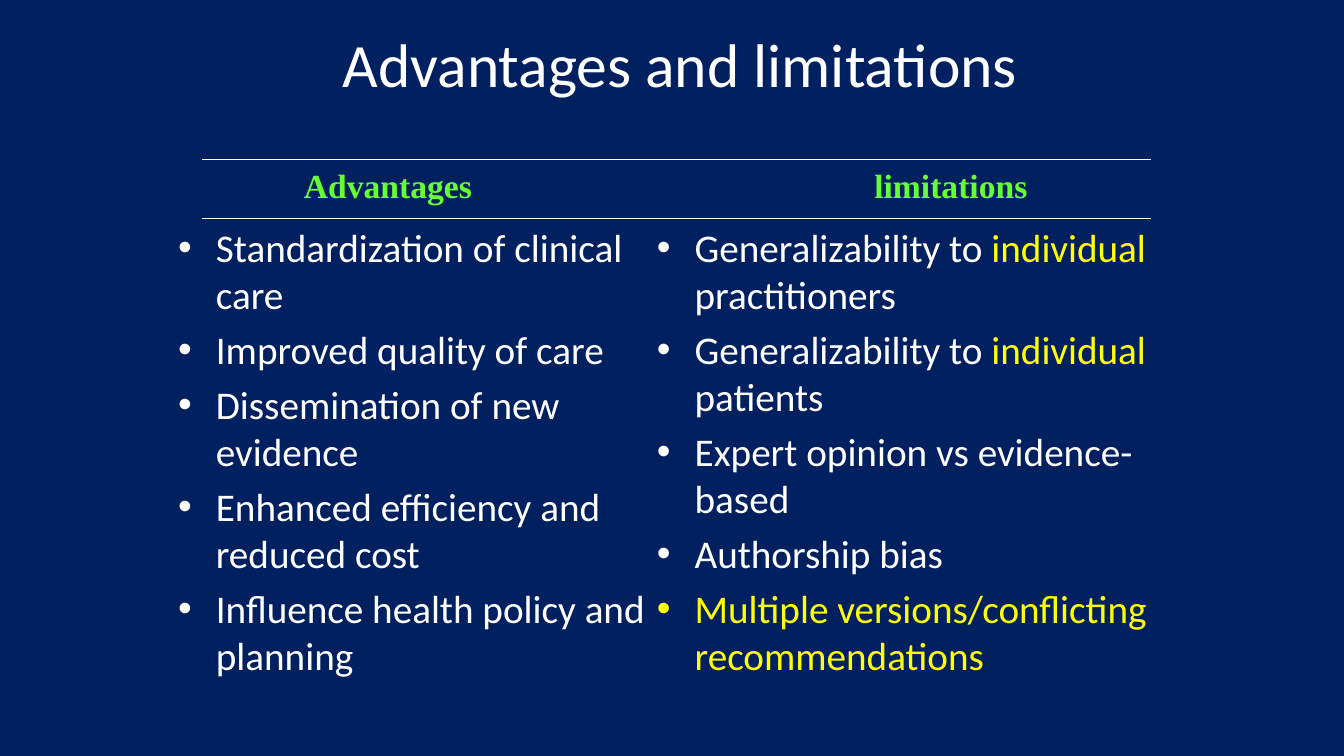
from dataclasses import dataclass

from lxml import etree
from pptx import Presentation
from pptx.dml.color import RGBColor
from pptx.enum.shapes import MSO_CONNECTOR
from pptx.enum.text import MSO_ANCHOR, MSO_AUTO_SIZE, PP_ALIGN
from pptx.oxml.ns import qn
from pptx.util import Pt

STRAIGHT = MSO_CONNECTOR.STRAIGHT
MIDDLE = MSO_ANCHOR.MIDDLE
CENTER = PP_ALIGN.CENTER
NO_FIT = MSO_AUTO_SIZE.NONE
TWO_CONTENT = 3


@dataclass(frozen=True)
class Theme:
    background: RGBColor = RGBColor(0x00, 0x20, 0x60)
    text: RGBColor = RGBColor(0xFF, 0xFF, 0xFF)
    accent: RGBColor = RGBColor(0xFF, 0xFF, 0x00)
    heading: RGBColor = RGBColor(0x66, 0xFF, 0x33)
    body_font: str = "Calibri"
    heading_font: str = "Times New Roman"
    title_size: Pt = Pt(44)
    body_size: Pt = Pt(28)
    heading_size: Pt = Pt(24)
    rule_width: Pt = Pt(0.75)


THEME = Theme()

# Each item is a list of (wording, highlighted) spans.
ADVANTAGES = [
    [("Standardization of clinical care", False)],
    [("Improved quality of care", False)],
    [("Dissemination of new evidence", False)],
    [("Enhanced efficiency and reduced cost", False)],
    [("Influence health policy and planning", False)],
]
LIMITATIONS = [
    [("Generalizability to ", False), ("individual", True), (" practitioners", False)],
    [("Generalizability to ", False), ("individual", True), (" patients", False)],
    [("Expert opinion vs evidence-based", False)],
    [("Authorship bias", False)],
    [("Multiple versions/conflicting recommendations", True)],
]


def place(shape, box):
    shape.left, shape.top, shape.width, shape.height = (Pt(value) for value in box)


def set_font(font, name, size, color, bold=False):
    font.name, font.size, font.bold = name, size, bold
    font.color.rgb = color


def fill_title(title, box, wording):
    place(title, box)
    frame = title.text_frame
    frame.auto_size = NO_FIT
    frame.vertical_anchor = MIDDLE
    frame.text = wording
    para = frame.paragraphs[0]
    para.alignment = CENTER
    set_font(para.font, THEME.body_font, THEME.title_size, THEME.text)


def fill_list(body, box, items):
    """Fill a body placeholder; bullets and spacing come from its layout."""
    place(body, box)
    frame = body.text_frame
    frame.auto_size = NO_FIT
    for index, spans in enumerate(items):
        para = frame.add_paragraph() if index else frame.paragraphs[0]
        set_font(para.font, THEME.body_font, THEME.body_size, THEME.text)
        for wording, highlighted in spans:
            span = para.add_run()
            span.text = wording
            if highlighted:
                span.font.color.rgb = THEME.accent


def add_rule(page, left, right, y):
    rule = page.shapes.add_connector(STRAIGHT, Pt(left), Pt(y), Pt(right), Pt(y))
    rule.line.color.rgb = THEME.text
    rule.line.width = THEME.rule_width
    etree.SubElement(rule._element.spPr, qn("a:effectLst"))


def add_heading_band(page, box, headings):
    """Draw both column headings, the second at a tab stop, between two rules."""
    left, top, width, height = box
    indent, second_heading = 66, 407.5
    label = page.shapes.add_textbox(
        Pt(left + indent), Pt(top), Pt(width - indent), Pt(height - 6))
    frame = label.text_frame
    frame.word_wrap = True
    para = frame.paragraphs[0]
    tabs = etree.SubElement(para._p.get_or_add_pPr(), qn("a:tabLst"))
    etree.SubElement(tabs, qn("a:tab"), pos=str(Pt(second_heading)), algn="l")
    para.add_run().text = "\t".join(headings)
    set_font(para.font, THEME.heading_font, THEME.heading_size, THEME.heading, bold=True)
    for y in (top + height, top):
        add_rule(page, left, left + width, y)


def build_comparison(deck):
    page = deck.slides.add_slide(deck.slide_layouts[TWO_CONTENT])
    page.background.fill.solid()
    page.background.fill.fore_color.rgb = THEME.background
    title, advantages, limitations = page.placeholders
    fill_title(title, (180, 0, 612, 90), "Advantages and limitations")
    fill_list(advantages, (120, 156, 360, 354), ADVANTAGES)
    fill_list(limitations, (462, 156, 378, 354), LIMITATIONS)
    add_heading_band(page, (144, 114, 678, 42), ("Advantages", "limitations"))


def main():
    deck = Presentation()
    deck.slide_width, deck.slide_height = Pt(960), Pt(540)
    build_comparison(deck)
    deck.save("out.pptx")


if __name__ == "__main__":
    main()
